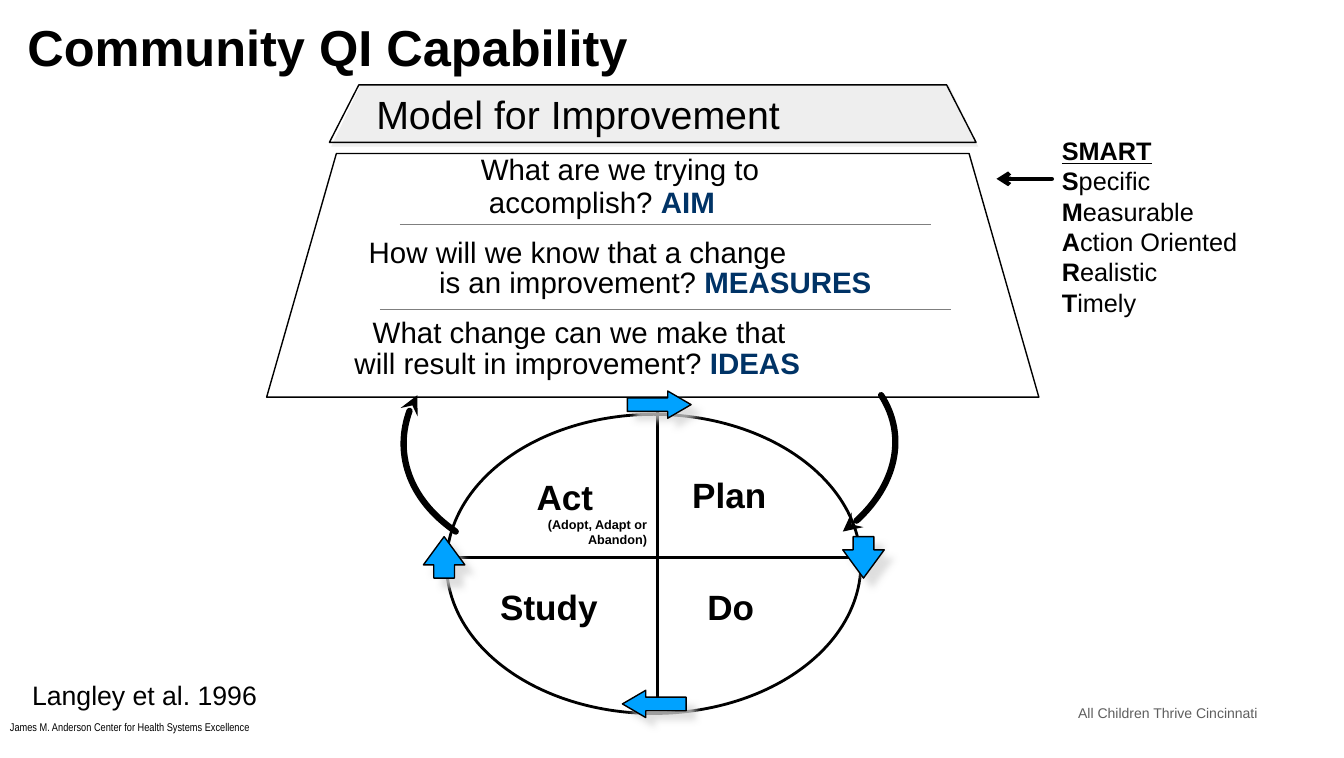
import dataclasses
import pptx
import pptx.dml.color
import pptx.enum.shapes
import pptx.enum.text
import pptx.oxml
import pptx.oxml.ns
import pptx.util
from lxml import etree

Pt = pptx.util.Pt
Shape = pptx.enum.shapes.MSO_SHAPE
Align = pptx.enum.text.PP_ALIGN
Anchor = pptx.enum.text.MSO_ANCHOR
qn = pptx.oxml.ns.qn


@dataclasses.dataclass
class Theme:
    font: str = "Arial"
    narrow: str = "Arial Narrow"
    ink: str = "000000"
    paper: str = "FFFFFF"
    banner: str = "EEEEEE"
    rule: str = "7F7F7F"
    accent: str = "003366"
    arrow: str = "00A2FF"
    shadow: str = "D5D5D5"
    muted: str = "5E5E5E"
    title: int = 36
    heading: int = 28
    phase: int = 25
    question: int = 21
    source: int = 19
    body: int = 18
    footer: int = 10
    note: int = 9
    credit: int = 8


def rgb(color):
    return pptx.dml.color.RGBColor.from_string(color)


class Board:
    def __init__(self, slide, theme):
        self.slide = slide
        self.theme = theme

    def paint(self, shape, fill, line, width):
        shape.shadow.inherit = False
        if fill:
            shape.fill.solid()
            shape.fill.fore_color.rgb = rgb(fill)
        else:
            shape.fill.background()
        if line:
            shape.line.color.rgb = rgb(line)
            shape.line.width = Pt(width)
        else:
            shape.line.fill.background()
        return shape

    def text(self, left, top, width, height, paragraphs, size, color=None, font=None,
             align=Align.LEFT, anchor=Anchor.TOP, margins=(7.2, 3.6)):
        box = self.slide.shapes.add_textbox(Pt(left), Pt(top), Pt(width), Pt(height))
        frame = box.text_frame
        frame.word_wrap = True
        frame.vertical_anchor = anchor
        frame.margin_left = frame.margin_right = Pt(margins[0])
        frame.margin_top = frame.margin_bottom = Pt(margins[1])
        for index, pieces in enumerate(paragraphs):
            paragraph = frame.paragraphs[0] if index == 0 else frame.add_paragraph()
            paragraph.alignment = align
            for words, bold, *tint in pieces:
                run = paragraph.add_run()
                run.text = words
                run.font.name = font or self.theme.font
                run.font.size = Pt(size)
                run.font.bold = bold
                run.font.color.rgb = rgb(tint[0] if tint else color or self.theme.ink)
        return frame.paragraphs

    def trapezoid(self, left, top, right, bottom, inset, fill=None, line=None):
        builder = self.slide.shapes.build_freeform(Pt(left + inset), Pt(top), scale=1.0)
        corners = [(right - inset, top), (right, bottom), (left, bottom)]
        builder.add_line_segments([(Pt(x), Pt(y)) for x, y in corners], close=True)
        self.paint(builder.convert_to_shape(), fill, line, 1)

    def curve(self, points):
        start, *rest = [(Pt(x), Pt(y)) for x, y in points]
        builder = self.slide.shapes.build_freeform(*start, scale=1.0)
        builder.add_line_segments(rest, close=False)
        arc = self.paint(builder.convert_to_shape(), None, self.theme.ink, 4.5)
        segments = list(arc.element.iter(qn("a:lnTo")))
        bezier = etree.SubElement(segments[0].getparent(), qn("a:cubicBezTo"))
        for segment in segments:
            bezier.append(segment[0])
            segment.getparent().remove(segment)
        self.arrowhead(arc, "stealth")

    def arrowhead(self, stroke, kind):
        line = stroke.line._get_or_add_ln()
        line.set("cap", "rnd")
        etree.SubElement(line, qn("a:round"))
        etree.SubElement(line, qn("a:tailEnd"), type=kind)

    def line(self, x1, y1, x2, y2, color, width, head=None):
        stroke = self.slide.shapes.add_connector(
            pptx.enum.shapes.MSO_CONNECTOR.STRAIGHT, Pt(x1), Pt(y1), Pt(x2), Pt(y2))
        stroke.line.color.rgb = rgb(color)
        stroke.line.width = Pt(width)
        if head:
            self.arrowhead(stroke, head)
        etree.SubElement(stroke.element.spPr, qn("a:effectLst"))

    def ellipse(self, left, top, width, height):
        oval = self.slide.shapes.add_shape(
            Shape.OVAL, Pt(left), Pt(top), Pt(width), Pt(height))
        self.paint(oval, self.theme.paper, self.theme.ink, 2)

    def block_arrow(self, kind, left, top, width, height, head):
        arrow = self.slide.shapes.add_shape(kind, Pt(left), Pt(top), Pt(width), Pt(height))
        self.paint(arrow, self.theme.arrow, self.theme.ink, 1)
        arrow.adjustments[0] = 0.5
        arrow.adjustments[1] = head
        effects = arrow.element.spPr.find(qn("a:effectLst"))
        shadow = etree.SubElement(effects, qn("a:outerShdw"), blurRad=str(Pt(5)),
                                  dist=str(Pt(8.5)), dir="2700000", rotWithShape="0")
        tint = etree.SubElement(shadow, qn("a:srgbClr"), val=self.theme.shadow)
        etree.SubElement(tint, qn("a:alpha"), val="75000")


def main():
    deck = pptx.Presentation()
    deck.slide_width, deck.slide_height = Pt(957.6), Pt(540)
    theme = Theme()
    board = Board(deck.slides.add_slide(deck.slide_layouts[6]), theme)

    board.text(766, 499.7, 160, 16, [[("All Children Thrive Cincinnati", False)]],
               theme.footer, theme.muted, anchor=Anchor.MIDDLE, margins=(2.2, 2.2))
    board.text(0, 509.8, 284, 17,
               [[("James M. Anderson Center for Health Systems Excellence", False)]],
               theme.credit, font=theme.narrow)

    board.trapezoid(236, 60.5, 697, 104.4, 21, fill=theme.banner)
    board.trapezoid(234.7, 60.5, 695.5, 101.5, 21, line=theme.ink)
    board.trapezoid(190, 109.4, 740.2, 283, 49.7, line=theme.ink)
    board.line(285, 160, 663, 160, theme.rule, 1)
    board.line(270.7, 220.3, 677.5, 220.3, theme.rule, 1)

    questions = [
        (335.5, 104.4, 230, "What are we trying to", None, Align.LEFT),
        (341.3, 127.4, 200, "accomplish? ", "AIM", Align.LEFT),
        (255.6, 163.4, 455, "How will we know that a change", None, Align.LEFT),
        (199.4, 184.6, 535, "is an improvement? ", "MEASURES", Align.CENTER),
        (258.5, 220.3, 430, "What change can we make that", None, Align.LEFT),
        (245.5, 242.2, 360, "will result in improvement? ", "IDEAS", Align.LEFT),
    ]
    for left, top, width, question, answer, align in questions:
        pieces = [(question, False)]
        if answer:
            pieces.append((answer, True, theme.accent))
        board.text(left, top, width, 33, [pieces], theme.question, align=align)
    board.text(261, 60.5, 428, 41, [[("Model for Improvement", False)]], theme.heading)

    board.ellipse(318.2, 295.2, 295.2, 213.1)
    board.line(468.7, 288.7, 468.7, 502.6, theme.ink, 2)
    act = board.text(339, 336.2, 127, 57,
                     [[("Act", True)], [("(Adopt, Adapt or", True)], [("Abandon)", True)]],
                     theme.phase, align=Align.CENTER, margins=(5, 2.2))
    for note in act[1:]:
        note.alignment = Align.RIGHT
        note.runs[0].font.size = Pt(theme.note)
    for phase, left, top in [("Plan", 488.2, 334.8), ("Study", 351.4, 414.7),
                             ("Do", 499, 414.7)]:
        board.text(left, top, 95, 35, [[(phase, True)]], theme.phase, margins=(5, 2.2))
    board.line(316, 397.4, 625.7, 397.4, theme.ink, 2)

    for kind, left, top in [(Shape.RIGHT_ARROW, 447, 278.6), (Shape.LEFT_ARROW, 443.5, 491.8)]:
        board.block_arrow(kind, left, top, 45.4, 19.4, 0.858)
    for kind, left in [(Shape.DOWN_ARROW, 600.5), (Shape.UP_ARROW, 301.7)]:
        board.block_arrow(kind, left, 382.3, 29.5, 29.5, 0.681)

    rising = [(324.7, 378.7), (290.2, 355), (277.9, 311.8), (297.4, 281.5)]
    board.curve(rising)
    board.curve([(925.2 - x, y) for x, y in reversed(rising)])

    criteria = ["Specific", "Measurable", "Action Oriented", "Realistic", "Timely"]
    smart = board.text(749.5, 92.9, 191.5, 138.2,
                       [[("SMART", True)]] + [[(word[0], True), (word[1:], False)]
                                              for word in criteria], theme.body)
    smart[0].runs[0].font.underline = True
    board.line(749.5, 127.4, 710, 127.4, theme.ink, 3, "arrow")

    board.text(15.8, 480.2, 240, 30, [[("Langley et al. 1996", False)]], theme.source)
    title = board.text(12.4, 6.5, 550, 46, [[("Community QI Capability", True)]],
                       theme.title, anchor=Anchor.MIDDLE)[0]
    title.line_spacing = 1.15
    title.space_after = Pt(10)
    deck.save("out.pptx")


if __name__ == "__main__":
    main()
